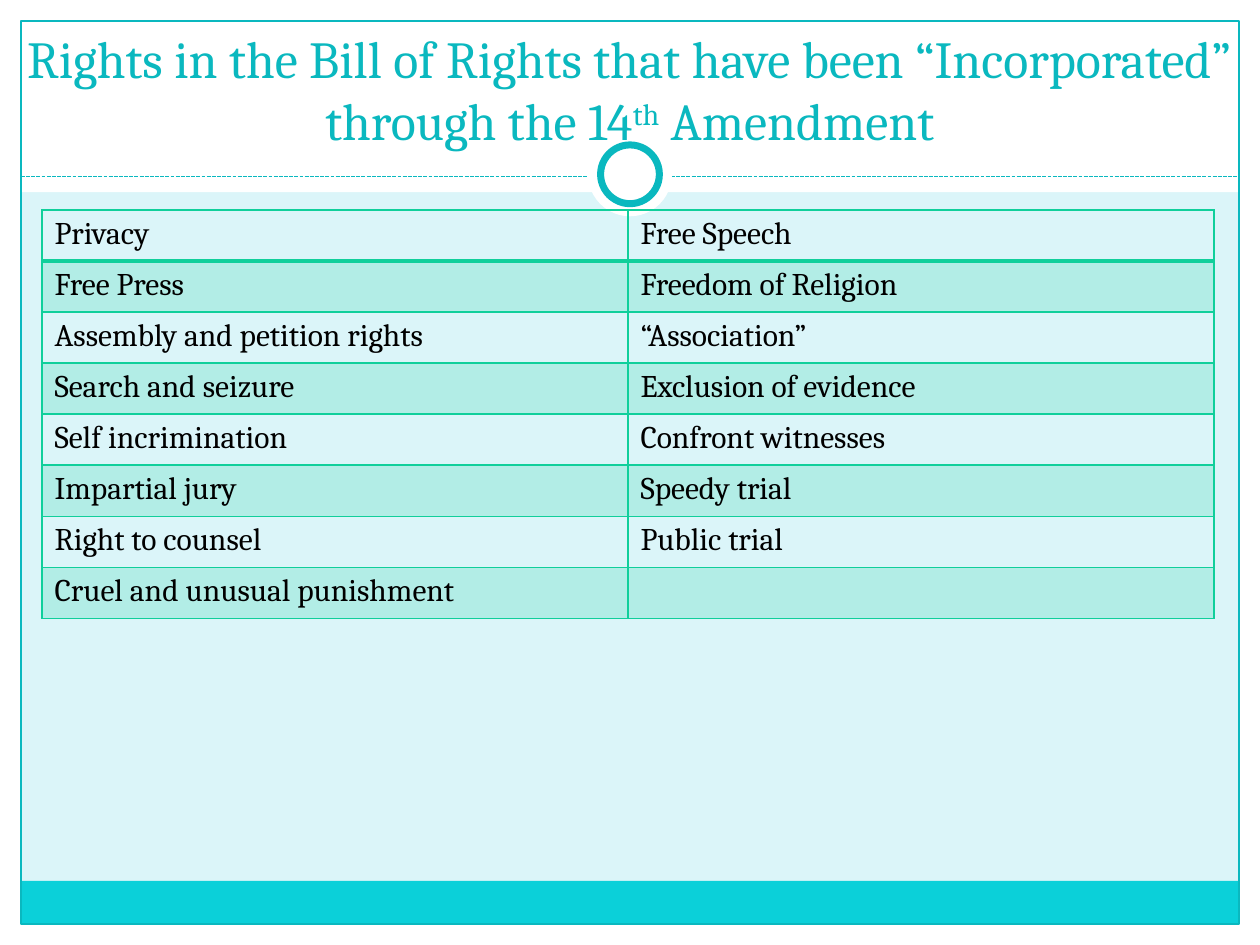
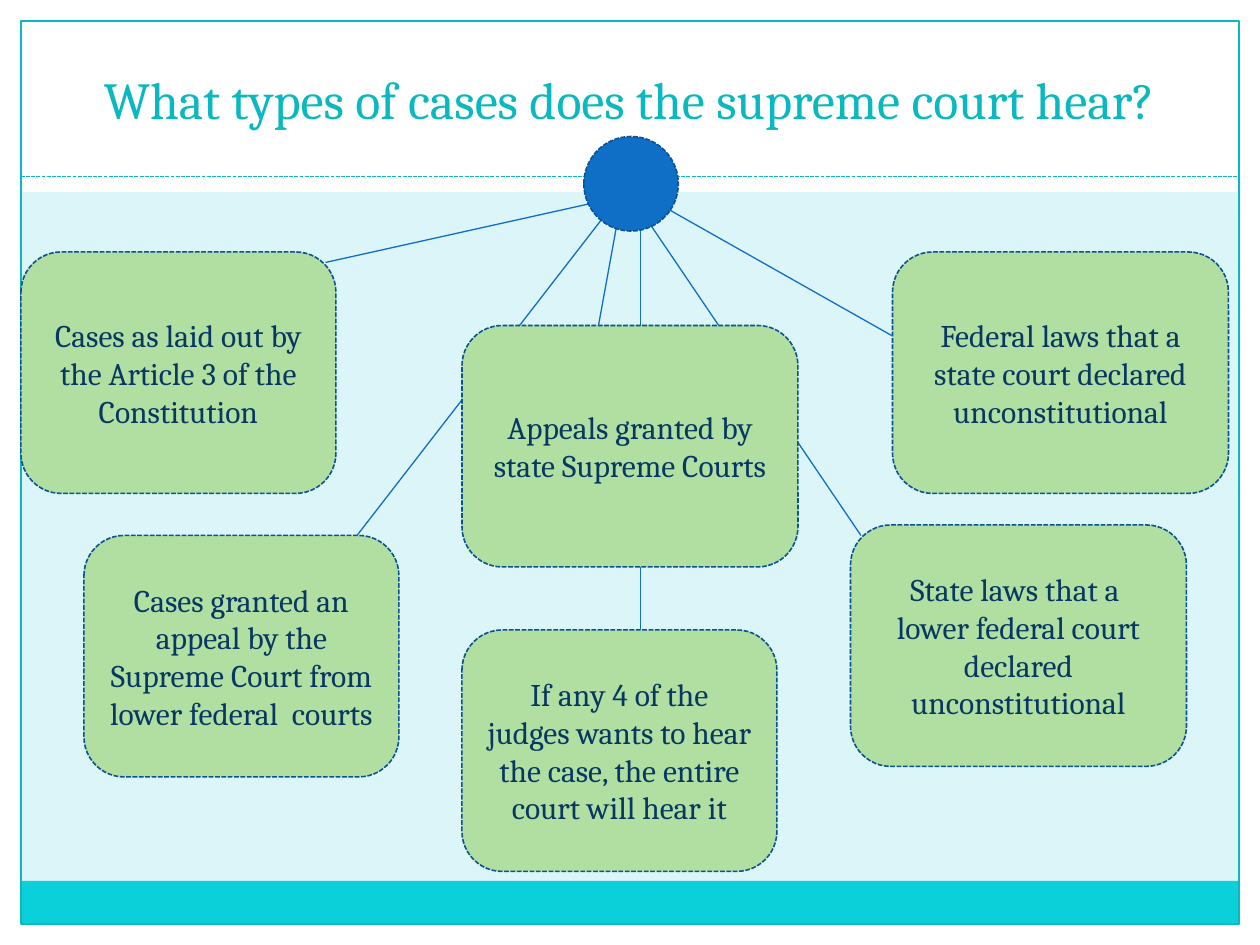
from dataclasses import dataclass
from typing import NamedTuple, Optional

from lxml.etree import SubElement
from pptx import Presentation
from pptx.dml.color import RGBColor
from pptx.enum.dml import MSO_LINE as Dash
from pptx.enum.shapes import MSO_CONNECTOR as Connector, MSO_SHAPE as Shape
from pptx.enum.text import MSO_ANCHOR as Anchor, PP_ALIGN as Align
from pptx.oxml.ns import qn
from pptx.util import Emu, Pt

EMU_PER_PX = 7620
PAGE_WIDTH, PAGE_HEIGHT = 1200, 900
MARGIN = 20
FONT = "Cambria"
TITLE_SIZE, BODY_SIZE = 29.7, 18

COLORS = {
    "page": "DBF5F9",
    "white": "FFFFFF",
    "footer": "0BD0D9",
    "teal": "0AB8BF",
    "grid": "10CF9B",
    "black": "000000",
    "case": "B0DFA1",
    "case_line": "0B5292",
    "case_text": "083763",
    "hub": "0F6FC6",
}


class Area(NamedTuple):
    """A rectangle in px."""

    left: int
    top: int
    width: int
    height: int


class Stroke(NamedTuple):
    """The look of a line."""

    color: str
    points: float
    dashed: bool = False


@dataclass(frozen=True)
class Panel:
    """A preset shape with optional fill and outline."""

    area: Area
    fill: Optional[str] = None
    stroke: Optional[Stroke] = None
    kind: Shape = Shape.RECTANGLE


@dataclass(frozen=True)
class Spoke:
    """A straight line between two points in px."""

    start: tuple[int, int]
    end: tuple[int, int]


@dataclass(frozen=True)
class Case:
    """A rounded box that names one type of case."""

    area: Area
    text: str


class Span(NamedTuple):
    """A piece of a title with its baseline shift in percent."""

    text: str
    baseline: int = 0


TEAL_LINE = Stroke("teal", 0.75)
TEAL_DASHES = Stroke("teal", 0.75, True)
CASE_LINE = Stroke("case_line", 0.9, True)
SPOKE_LINE = Stroke("hub", 0.75)

FRAME = (
    Panel(Area(0, PAGE_HEIGHT - MARGIN, PAGE_WIDTH, MARGIN), "white"),
    Panel(Area(0, 0, PAGE_WIDTH, 183), "white"),
    Panel(Area(0, 0, MARGIN, PAGE_HEIGHT), "white"),
    Panel(Area(PAGE_WIDTH - MARGIN, 0, MARGIN, PAGE_HEIGHT), "white"),
    Panel(Area(MARGIN, 839, PAGE_WIDTH - 2 * MARGIN, 41), "footer"),
    Panel(Area(MARGIN, MARGIN, PAGE_WIDTH - 2 * MARGIN, PAGE_HEIGHT - 2 * MARGIN), stroke=TEAL_LINE),
)
TITLE_RULE = Spoke((MARGIN, 168), (PAGE_WIDTH - MARGIN, 168))
RING = (
    Panel(Area(560, 126, 80, 80), "white", kind=Shape.OVAL),
    Panel(Area(572, 138, 56, 56), "white", Stroke("teal", 4), Shape.OVAL),
)

RIGHTS = (
    ("Privacy", "Free Speech"),
    ("Free Press", "Freedom of Religion"),
    ("Assembly and petition rights", "“Association”"),
    ("Search and seizure", "Exclusion of evidence"),
    ("Self incrimination", "Confront witnesses"),
    ("Impartial jury", "Speedy trial"),
    ("Right to counsel", "Public trial"),
    ("Cruel and unusual punishment", ""),
)

OUTER_CASES = (
    Case(Area(20, 240, 300, 230), "Cases as laid out by the Article 3 of the Constitution"),
    Case(
        Area(80, 510, 300, 230),
        "Cases granted an appeal by the Supreme Court from lower federal  courts",
    ),
    Case(
        Area(440, 600, 300, 230),
        "If any 4 of the judges wants to hear the case, the entire court will hear it",
    ),
    Case(
        Area(810, 500, 320, 230),
        "State laws that a  lower federal court declared unconstitutional",
    ),
    Case(Area(850, 240, 320, 230), "Federal laws that a state court declared unconstitutional"),
)
CENTER_CASE = Case(Area(440, 310, 320, 230), "Appeals granted by state Supreme Courts")
BACK_SPOKES = (
    Spoke((340, 510), (580, 200)),
    Spoke((610, 200), (610, 600)),
    Spoke((610, 200), (820, 510)),
)
FRONT_SPOKES = (
    Spoke((310, 250), (580, 190)),
    Spoke((590, 200), (570, 310)),
    Spoke((620, 190), (850, 320)),
)
HUB = Panel(Area(556, 130, 90, 90), "hub", CASE_LINE, Shape.OVAL)


def px(length: int) -> Emu:
    """Turn px into EMU."""
    return Emu(length * EMU_PER_PX)


def rgb(name: str) -> RGBColor:
    """Look up a named colour."""
    return RGBColor.from_string(COLORS[name])


def style_line(line, stroke: Stroke) -> None:
    """Give a line its colour, width and dashes."""
    line.color.rgb = rgb(stroke.color)
    line.width = Pt(stroke.points)
    if stroke.dashed:
        line.dash_style = Dash.SQUARE_DOT


def style_para(para, size: float, color: str, align: Align) -> None:
    """Set the font and alignment of a paragraph."""
    para.alignment = align
    para.font.name = FONT
    para.font.size = Pt(size)
    para.font.color.rgb = rgb(color)


def draw_panel(page, panel: Panel):
    """Draw a preset shape."""
    shape = page.shapes.add_shape(panel.kind, *map(px, panel.area))
    shape.shadow.inherit = False
    if panel.fill:
        shape.fill.solid()
        shape.fill.fore_color.rgb = rgb(panel.fill)
    else:
        shape.fill.background()
    if panel.stroke:
        style_line(shape.line, panel.stroke)
    else:
        shape.line.fill.background()
    return shape


def draw_spoke(page, spoke: Spoke, stroke: Stroke) -> None:
    """Draw a straight line without a shadow."""
    points = map(px, spoke.start + spoke.end)
    connector = page.shapes.add_connector(Connector.STRAIGHT, *points)
    style_line(connector.line, stroke)
    SubElement(connector._element.spPr, qn("a:effectLst"))


def draw_case(page, case: Case) -> None:
    """Draw a rounded box with centred text."""
    box = draw_panel(page, Panel(case.area, "case", CASE_LINE, Shape.ROUNDED_RECTANGLE))
    frame = box.text_frame
    frame.word_wrap = True
    frame.vertical_anchor = Anchor.MIDDLE
    para = frame.paragraphs[0]
    para.add_run().text = case.text
    style_para(para, BODY_SIZE, "case_text", Align.CENTER)


def draw_title(page, area: Area, spans: tuple[Span, ...]) -> None:
    """Write the title at the bottom of its box."""
    frame = page.shapes.add_textbox(*map(px, area)).text_frame
    frame.word_wrap = True
    frame.vertical_anchor = Anchor.BOTTOM
    para = frame.paragraphs[0]
    style_para(para, TITLE_SIZE, "teal", Align.CENTER)
    for text, baseline in spans:
        span = para.add_run()
        span.text = text
        if baseline:
            span._r.get_or_add_rPr().set("baseline", str(baseline * 1000))


def add_page(deck, title_area: Area, title: tuple[Span, ...]):
    """Add a page with the shared frame and a title."""
    page = deck.slides.add_slide(deck.slide_layouts[6])
    page.background.fill.solid()
    page.background.fill.fore_color.rgb = rgb("page")
    for panel in FRAME:
        draw_panel(page, panel)
    draw_spoke(page, TITLE_RULE, TEAL_DASHES)
    for panel in RING:
        draw_panel(page, panel)
    draw_title(page, title_area, title)
    return page


def style_cell(cell, banded: bool, top: int, bottom: int) -> None:
    """Set the borders and the band fill of a table cell."""
    properties = cell._tc.get_or_add_tcPr()
    for side, points in (("L", 1), ("R", 1), ("T", top), ("B", bottom)):
        border = SubElement(properties, qn(f"a:ln{side}"), w=str(Pt(points)))
        fill = SubElement(border, qn("a:solidFill"))
        SubElement(fill, qn("a:srgbClr"), val=COLORS["grid"])
    if banded:
        cell.fill.solid()
        cell.fill.fore_color.rgb = rgb("grid")
        color = properties.find(qn("a:solidFill")).find(qn("a:srgbClr"))
        SubElement(color, qn("a:alpha"), val="20000")
    else:
        cell.fill.background()


def draw_rights(page, area: Area) -> None:
    """Draw the table of rights with every second row banded."""
    table = page.shapes.add_table(len(RIGHTS), len(RIGHTS[0]), *map(px, area)).table
    table.first_row = False
    table.horz_banding = False
    for row, rights in enumerate(RIGHTS):
        for column, right in enumerate(rights):
            cell = table.cell(row, column)
            style_cell(cell, row % 2 == 1, 2 if row == 1 else 1, 2 if row == 0 else 1)
            para = cell.text_frame.paragraphs[0]
            if right:
                para.add_run().text = right
            style_para(para, BODY_SIZE, "black", Align.LEFT)


def build_rights_page(deck) -> None:
    """Build the page on incorporated rights."""
    title = (
        Span("Rights in the Bill of Rights that have been “Incorporated” through the 14"),
        Span("th", 30),
        Span(" Amendment"),
    )
    page = add_page(deck, Area(0, 30, PAGE_WIDTH, 120), title)
    draw_rights(page, Area(40, 200, 1116, 389))


def build_cases_page(deck) -> None:
    """Build the page on types of cases."""
    title = (Span("What types of cases does the supreme court hear?"),)
    page = add_page(deck, Area(40, 30, 1120, 100), title)
    for case in OUTER_CASES:
        draw_case(page, case)
    for spoke in BACK_SPOKES:
        draw_spoke(page, spoke, SPOKE_LINE)
    draw_case(page, CENTER_CASE)
    for spoke in FRONT_SPOKES:
        draw_spoke(page, spoke, SPOKE_LINE)
    draw_panel(page, HUB)


def main() -> None:
    """Build and save the deck."""
    deck = Presentation()
    deck.slide_width, deck.slide_height = px(PAGE_WIDTH), px(PAGE_HEIGHT)
    build_rights_page(deck)
    build_cases_page(deck)
    deck.save("out.pptx")


if __name__ == "__main__":
    main()
